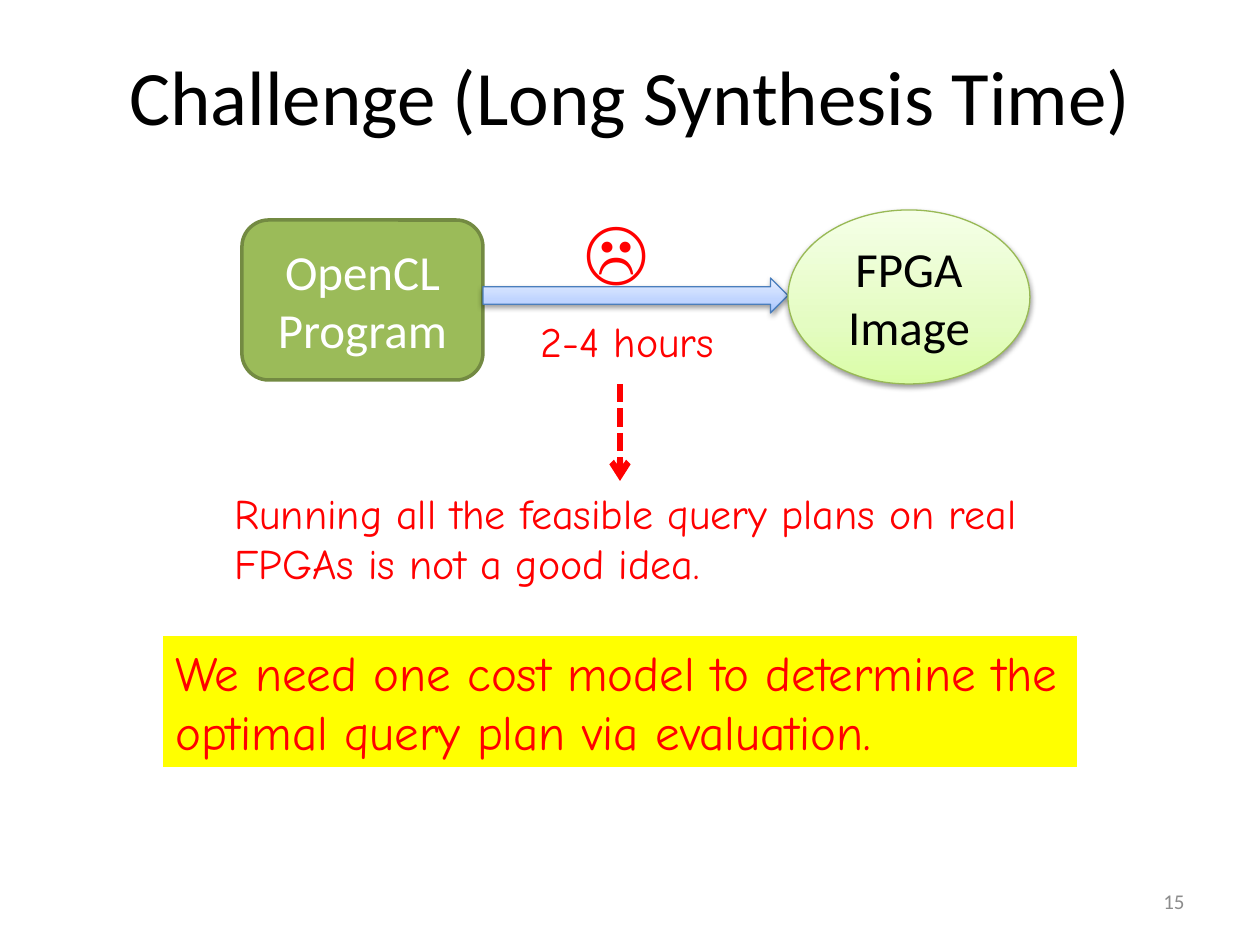
from lxml.etree import SubElement
from pptx import Presentation
from pptx.dml.color import RGBColor
from pptx.enum.dml import MSO_LINE
from pptx.enum.shapes import MSO_CONNECTOR, MSO_SHAPE as Shape
from pptx.enum.text import MSO_ANCHOR as Anchor, MSO_AUTO_SIZE as AutoSize, PP_ALIGN as Align
from pptx.oxml.ns import qn
from pptx.util import Pt

EMU_PER_PX = 914400 / 126
TITLE_ONLY = 5
BODY_FONT = "Calibri"
NOTE_FONT = "Comic Neue"

BLACK = RGBColor(0x00, 0x00, 0x00)
WHITE = RGBColor(0xFF, 0xFF, 0xFF)
GRAY = RGBColor(0x8C, 0x8C, 0x8C)
RED = RGBColor(0xFF, 0x00, 0x00)
YELLOW = RGBColor(0xFF, 0xFF, 0x00)
GREEN = RGBColor(0x9B, 0xBB, 0x59)
DARK_GREEN = RGBColor(0x73, 0x8A, 0x42)
LIME_EDGE = RGBColor(0x98, 0xB9, 0x55)
BLUE_EDGE = RGBColor(0x4B, 0x7E, 0xBC)
LIME_STOPS = (RGBColor(0xDA, 0xFD, 0xA7), RGBColor(0xE4, 0xFC, 0xC2), RGBColor(0xF5, 0xFF, 0xE7))
BLUE_STOPS = (RGBColor(0xA4, 0xC4, 0xFF), RGBColor(0xBF, 0xD4, 0xFF), RGBColor(0xE6, 0xEE, 0xFF))
STOP_PERCENTS = (0, 35, 100)


def px(*lengths):
    return [round(length * EMU_PER_PX) for length in lengths]


def write_text(box, text, *, size, color=BLACK, font=BODY_FONT,
               align=Align.CENTER, anchor=Anchor.MIDDLE, auto_size=AutoSize.NONE):
    frame = box.text_frame
    frame.word_wrap = True
    frame.auto_size = auto_size
    frame.vertical_anchor = anchor
    para = frame.paragraphs[0]
    para.alignment = align
    span = para.add_run()
    span.text = text
    span.font.name = font
    span.font.size = Pt(size)
    span.font.color.rgb = color


def add_title(page, text, place):
    title = page.shapes.title
    title.left, title.top, title.width, title.height = px(*place)
    write_text(title, text, size=44)


def add_note(page, text, place, *, size, fill=None):
    """Add a red handwritten remark, on a coloured ground if fill is given."""
    box = page.shapes.add_textbox(*px(*place))
    if fill is not None:
        box.fill.solid()
        box.fill.fore_color.rgb = fill
    write_text(box, text, size=size, color=RED, font=NOTE_FONT, align=Align.LEFT,
               anchor=Anchor.TOP, auto_size=AutoSize.SHAPE_TO_FIT_TEXT)


def add_block(page, kind, place, *, edge, edge_width):
    block = page.shapes.add_shape(kind, *px(*place))
    block.shadow.inherit = False
    block.line.color.rgb = edge
    block.line.width = Pt(edge_width)
    return block


def fill_gradient(block, colors):
    """Fill from the bottom up through three colours."""
    block.fill.gradient()
    block.fill.gradient_angle = 90
    stops = block._element.spPr.find(".//" + qn("a:gsLst"))
    stops.clear()
    for percent, color in zip(STOP_PERCENTS, colors):
        stop = SubElement(stops, qn("a:gs"), pos=str(percent * 1000))
        SubElement(stop, qn("a:srgbClr"), val=str(color))


def add_shadow(block):
    effects = block._element.spPr.find(qn("a:effectLst"))
    shadow = SubElement(effects, qn("a:outerShdw"), blurRad="40000", dist="20000",
                        dir="5400000", rotWithShape="0")
    color = SubElement(shadow, qn("a:srgbClr"), val=str(BLACK))
    SubElement(color, qn("a:alpha"), val="38000")


def add_glossy_block(page, kind, place, *, edge, colors):
    block = add_block(page, kind, place, edge=edge, edge_width=0.75)
    fill_gradient(block, colors)
    add_shadow(block)
    return block


def add_dashed_arrow(page, start, end):
    arrow = page.shapes.add_connector(MSO_CONNECTOR.STRAIGHT, *px(*start, *end))
    arrow.line.color.rgb = RED
    arrow.line.width = Pt(3.5)
    arrow.line.dash_style = MSO_LINE.SQUARE_DOT
    properties = arrow._element.spPr
    SubElement(properties.find(qn("a:ln")), qn("a:tailEnd"), type="arrow")
    SubElement(properties, qn("a:effectLst"))


def main():
    deck = Presentation()
    deck.slide_width, deck.slide_height = px(1260, 945)
    page = deck.slides.add_slide(deck.slide_layouts[TITLE_ONLY])

    add_title(page, "Challenge (Long Synthesis Time)", (53, 35, 1155, 120))
    number = page.shapes.add_textbox(*px(903, 876, 294, 50))
    write_text(number, "15", size=12, color=GRAY, align=Align.RIGHT)

    program = add_block(page, Shape.ROUNDED_RECTANGLE, (242, 220, 241, 160),
                        edge=DARK_GREEN, edge_width=2)
    program.fill.solid()
    program.fill.fore_color.rgb = GREEN
    write_text(program, "OpenCL Program", size=28, color=WHITE)

    add_glossy_block(page, Shape.RIGHT_ARROW, (483, 278, 305, 35),
                     edge=BLUE_EDGE, colors=BLUE_STOPS)
    image = add_glossy_block(page, Shape.OVAL, (788, 210, 242, 174),
                             edge=LIME_EDGE, colors=LIME_STOPS)
    write_text(image, "FPGA Image", size=28)

    add_note(page, "2-4 hours", (528, 309, 231, 63), size=24)
    add_note(page, "☹", (572, 200, 95, 97), size=40)
    add_dashed_arrow(page, (620, 384), (620, 481))
    add_note(page, "Running all the feasible query plans on real FPGAs is not a good idea.",
             (222, 481, 842, 115), size=24)
    add_note(page, "We need one cost model to determine the optimal query plan via evaluation.",
             (163, 636, 914, 131), size=28, fill=YELLOW)

    deck.save("out.pptx")


if __name__ == "__main__":
    main()
